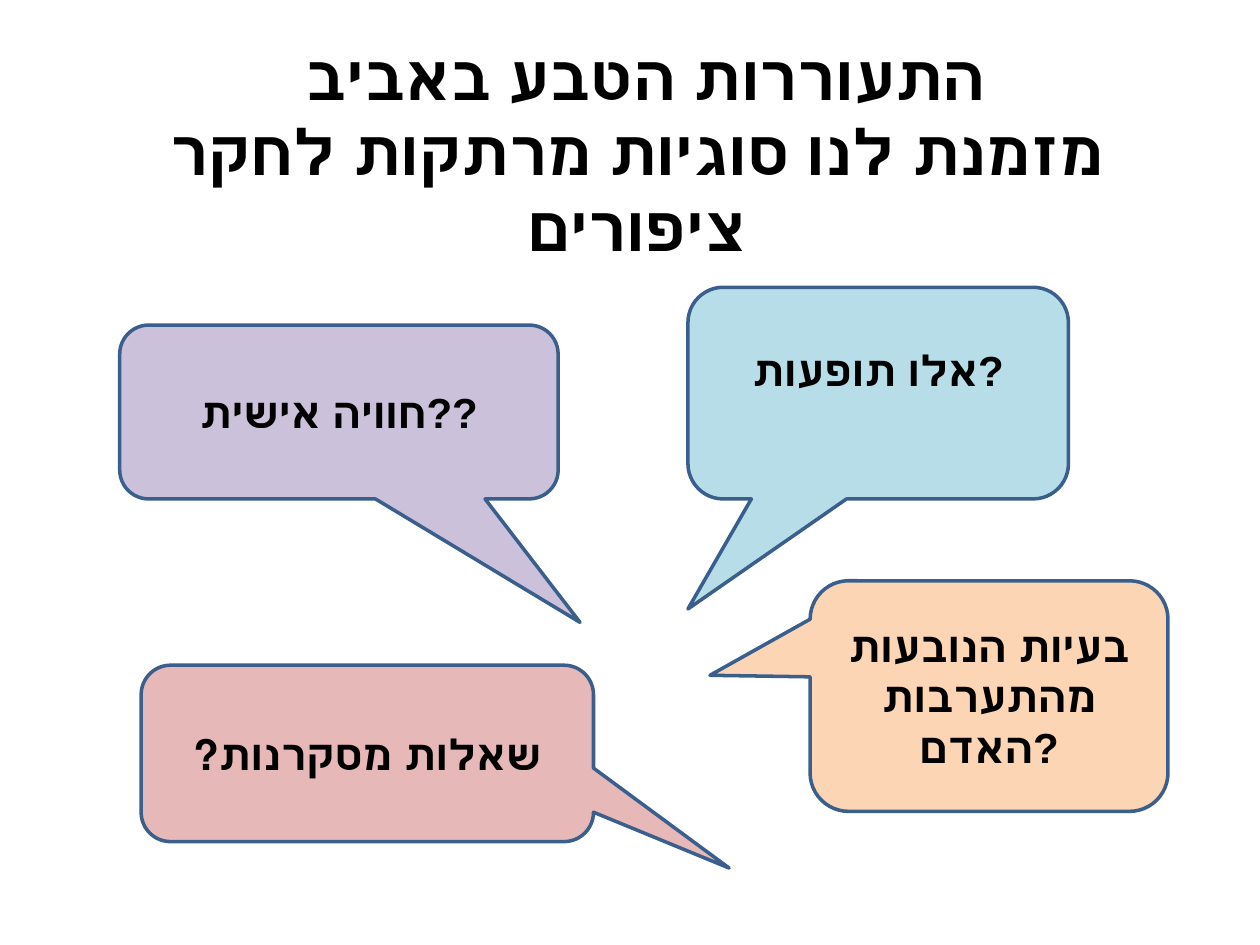
from pptx import Presentation
from pptx.dml.color import RGBColor
from pptx.enum.shapes import MSO_SHAPE as SHAPE
from pptx.enum.text import MSO_ANCHOR as ANCHOR, MSO_AUTO_SIZE as AUTO, PP_ALIGN as ALIGN
from pptx.util import Inches, Pt

TITLE = "התעוררות הטבע באביב \vמזמנת לנו סוגיות מרתקות לחקר ציפורים"
TITLE_BOX = (0.5, 0.3, 9.11, 1.79)
LINE = "3A5F8C"
BUBBLES = [
    dict(text="אלו תופעות?", box=(5.46, 2.28, 3.02, 1.68), tip=(-0.5, 1.02),
         fill="B7DEE8", rtl=False, bottom=0.42),
    dict(text="חוויה אישית??", box=(0.95, 2.58, 3.48, 1.38), tip=(0.55, 1.21),
         fill="CCC1DA", rtl=False, bottom=0.05),
    dict(text="בעיות הנובעות מהתערבות האדם?", box=(6.43, 4.61, 2.84, 1.83), tip=(-0.78, -0.09),
         fill="FCD5B5", rtl=False, bottom=0.05),
    dict(text="שאלות מסקרנות?", box=(1.12, 5.28, 3.59, 1.4), tip=(0.8, 0.65),
         fill="E6B9B8", rtl=True, bottom=0.05),
]


def color(value):
    return RGBColor.from_string(value)


def place(s, box):
    s.left, s.top, s.width, s.height = map(Inches, box)


def write(s, text, font, size, rtl):
    tf = s.text_frame
    tf.text = text
    tf.word_wrap = True
    tf.auto_size = AUTO.NONE
    tf.vertical_anchor = ANCHOR.MIDDLE
    p = tf.paragraphs[0]
    p.alignment = ALIGN.CENTER
    if rtl:
        p._p.get_or_add_pPr().set("rtl", "1")
    for r in p.runs:
        r.font.name = font
        r.font.size = Pt(size)
        r.font.bold = True
        r.font.color.rgb = color("000000")


def add_bubble(slide, text, box, tip, fill, rtl, bottom):
    s = slide.shapes.add_shape(SHAPE.ROUNDED_RECTANGULAR_CALLOUT, *map(Inches, box))
    s.adjustments[0], s.adjustments[1] = tip
    s.shadow.inherit = False
    s.fill.solid()
    s.fill.fore_color.rgb = color(fill)
    s.line.color.rgb = color(LINE)
    s.line.width = Pt(2)
    write(s, text, "Arial", 24, rtl)
    s.text_frame.margin_bottom = Inches(bottom)


def main():
    prs = Presentation()
    prs.slide_width, prs.slide_height = Inches(10), Inches(7.5)
    slide = prs.slides.add_slide(prs.slide_layouts[5])
    title = slide.shapes.title
    place(title, TITLE_BOX)
    write(title, TITLE, "Calibri", 36, True)
    tf = title.text_frame
    tf.margin_left = tf.margin_right = tf.margin_top = tf.margin_bottom = Inches(0.1)
    for bubble in BUBBLES:
        add_bubble(slide, **bubble)
    prs.save("out.pptx")


if __name__ == "__main__":
    main()
